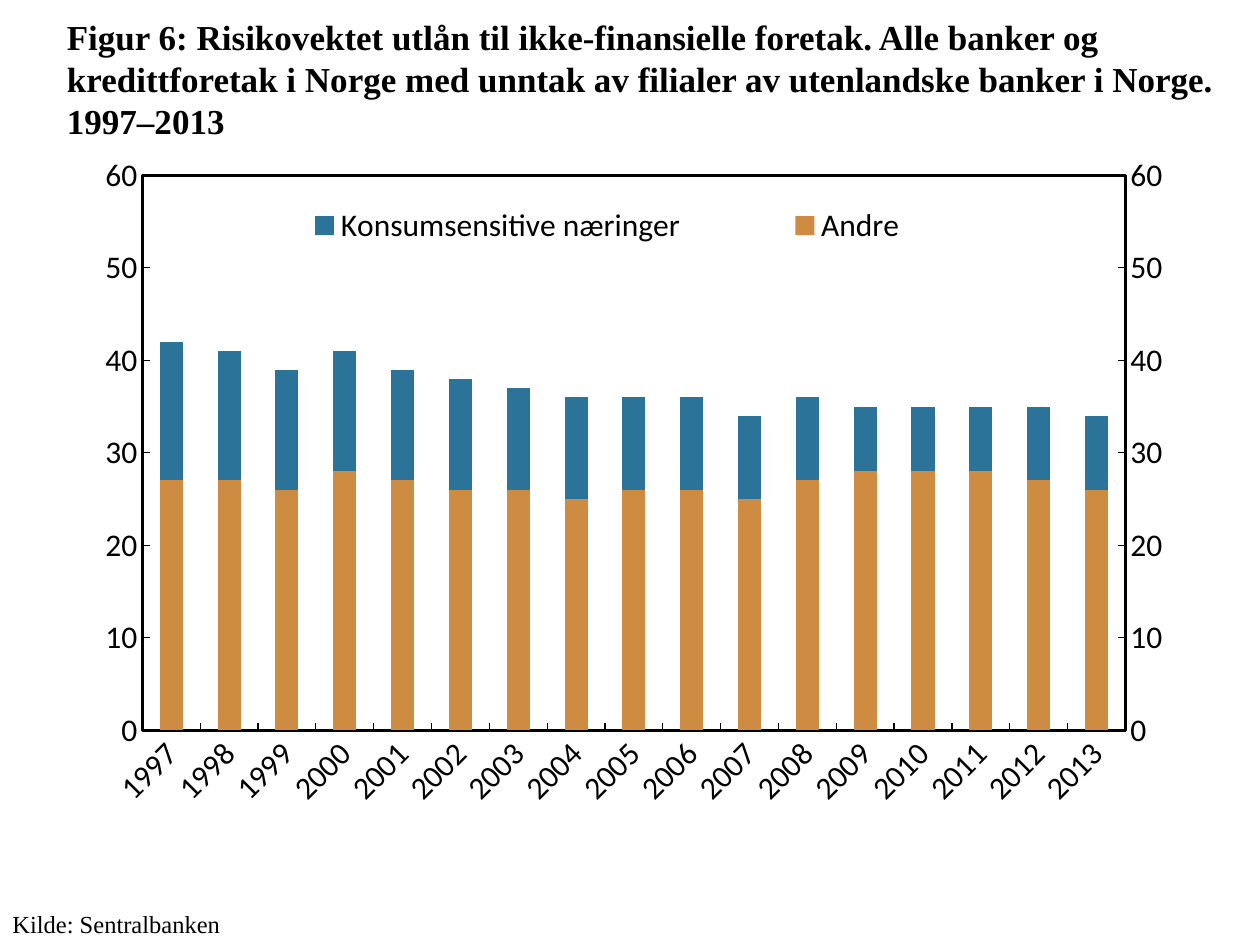
from copy import deepcopy
from lxml import etree
from pptx import Presentation
from pptx import util as u
from pptx.chart.data import CategoryChartData
from pptx.dml.color import RGBColor
from pptx.enum import chart as ch, text
from pptx.oxml import parse_xml
from pptx.oxml.ns import qn

Pt = u.Pt

# Content
TITLE = ("Figur 6: Risikovektet utlån til ikke-finansielle foretak. Alle banker og "
         "kredittforetak i Norge med unntak av filialer av utenlandske banker i Norge. "
         "1997–2013")
SOURCE = "Kilde: Sentralbanken"
YEARS = [str(y) for y in range(1997, 2014)]
SERIES = [
    ("Andre", "other",
     [27, 27, 26, 28, 27, 26, 26, 25, 26, 26, 25, 27, 28, 28, 28, 27, 26]),
    ("Konsumsensitive næringer", "consumer",
     [15, 14, 13, 13, 12, 12, 11, 11, 10, 10, 9, 9, 7, 7, 7, 8, 8]),
    ("Series 3", None, [50] * len(YEARS)),  # unfilled, carries the right axis
]
COLORS = {"other": "CD8C41", "consumer": "2C7399", "ink": "000000"}
SERIF, SANS = "Times New Roman", "Calibri"
C_NS = "http://schemas.openxmlformats.org/drawingml/2006/chart"
A_NS = "http://schemas.openxmlformats.org/drawingml/2006/main"


def rgb(name):
    return RGBColor.from_string(COLORS[name])


def style_font(font, name, size, bold=False):
    font.name, font.size, font.bold = name, Pt(size), bold
    font.color.rgb = rgb("ink")


def place(sp, left, top, width, height):
    sp.left, sp.top, sp.width, sp.height = map(Pt, (left, top, width, height))


def manual_layout(x, y, w, h, inner=False):
    target = '<c:layoutTarget val="inner"/>' if inner else ""
    return parse_xml(
        f'<c:layout xmlns:c="{C_NS}"><c:manualLayout>{target}'
        '<c:xMode val="edge"/><c:yMode val="edge"/>'
        f'<c:x val="{x}"/><c:y val="{y}"/><c:w val="{w}"/><c:h val="{h}"/>'
        '</c:manualLayout></c:layout>')


def add_right_axis(plot_area):
    """Move the last series to a second bar group with its own axes."""
    bars = plot_area.find(qn("c:barChart"))
    right_bars = deepcopy(bars)
    for ser in right_bars.findall(qn("c:ser"))[:-1]:
        right_bars.remove(ser)
    bars.remove(bars.findall(qn("c:ser"))[-1])
    bars.addnext(right_bars)

    cat, val = plot_area.find(qn("c:catAx")), plot_area.find(qn("c:valAx"))
    right_cat, right_val = deepcopy(cat), deepcopy(val)
    val.addnext(right_val)
    right_val.addnext(right_cat)
    new_ids = {cat.find(qn("c:axId")).get("val"): "5001",
               val.find(qn("c:axId")).get("val"): "5002"}
    for part in (right_bars, right_cat, right_val):
        for ref in part.iter(qn("c:axId"), qn("c:crossAx")):
            ref.set("val", new_ids[ref.get("val")])
    right_cat.find(qn("c:delete")).set("val", "1")
    right_val.find(qn("c:axPos")).set("val", "r")
    right_val.find(qn("c:crosses")).set("val", "max")


prs = Presentation()
prs.slide_width, prs.slide_height = Pt(720), Pt(540)
s = prs.slides.add_slide(prs.slide_layouts[5])

# Title
title = s.shapes.title
place(title, 31, 0, 674.5, 90)
tf = title.text_frame
tf.text = TITLE
tf.word_wrap = True
tf.auto_size = text.MSO_AUTO_SIZE.NONE
tf.vertical_anchor = text.MSO_ANCHOR.MIDDLE
p = tf.paragraphs[0]
p.alignment = text.PP_ALIGN.LEFT
style_font(p.font, SERIF, 20, bold=True)

# Stacked columns
data = CategoryChartData()
data.categories = YEARS
for name, _, values in SERIES:
    data.add_series(name, values)
chart = s.shapes.add_chart(ch.XL_CHART_TYPE.COLUMN_STACKED,
                           Pt(36), Pt(83), Pt(648), Pt(399.5), data).chart
chart.has_title = False
style_font(chart.font, SANS, 18)
plot = chart.plots[0]
plot.gap_width, plot.overlap, plot.vary_by_categories = 150, 100, False
for ser, (_, color, _) in zip(plot.series, SERIES):
    if color:
        ser.format.fill.solid()
        ser.format.fill.fore_color.rgb = rgb(color)
    else:
        ser.format.fill.background()
    ser.format.line.fill.background()

# Axes
for axis in (chart.category_axis, chart.value_axis):
    axis.has_major_gridlines = False
    axis.major_tick_mark = ch.XL_TICK_MARK.INSIDE
    axis.minor_tick_mark = ch.XL_TICK_MARK.NONE
    axis.format.line.color.rgb = rgb("ink")
    axis.format.line.width = Pt(0.75)
value_axis = chart.value_axis
value_axis.minimum_scale, value_axis.maximum_scale, value_axis.major_unit = 0, 60, 10
value_axis.tick_labels.number_format = "0"
value_axis.tick_labels.number_format_is_linked = False

# Legend above the columns, without the unfilled series
chart.has_legend = True
legend = chart.legend
legend.position = ch.XL_LEGEND_POSITION.RIGHT
legend.include_in_layout = True
legend_xml = chart.element.find(".//" + qn("c:legend"))
for old in legend_xml.findall(qn("c:layout")):
    legend_xml.remove(old)
hidden = parse_xml(f'<c:legendEntry xmlns:c="{C_NS}"><c:idx val="2"/>'
                   '<c:delete val="1"/></c:legendEntry>')
legend_xml.find(qn("c:legendPos")).addnext(hidden)
hidden.addnext(manual_layout(0.13, 0.07, 0.7, 0.09))

# Plot area: position, right axis and frame
plot_area = chart.element.find(".//" + qn("c:plotArea"))
for old in plot_area.findall(qn("c:layout")):
    plot_area.remove(old)
plot_area.insert(0, manual_layout(0.07, 0.043, 0.867, 0.794, inner=True))
add_right_axis(plot_area)
frame = etree.SubElement(plot_area, qn("c:spPr"))
etree.SubElement(frame, qn("a:noFill"))
frame.append(parse_xml(
    f'<a:ln xmlns:a="{A_NS}" w="{Pt(1.75)}"><a:solidFill>'
    f'<a:srgbClr val="{COLORS["ink"]}"/></a:solidFill></a:ln>'))

# Source note
note = s.shapes.add_textbox(Pt(0), Pt(516), Pt(667.5), Pt(24.5))
tf = note.text_frame
tf.word_wrap = True
tf.auto_size = text.MSO_AUTO_SIZE.SHAPE_TO_FIT_TEXT
tf.text = SOURCE
style_font(tf.paragraphs[0].font, SERIF, 14)

prs.save("out.pptx")
